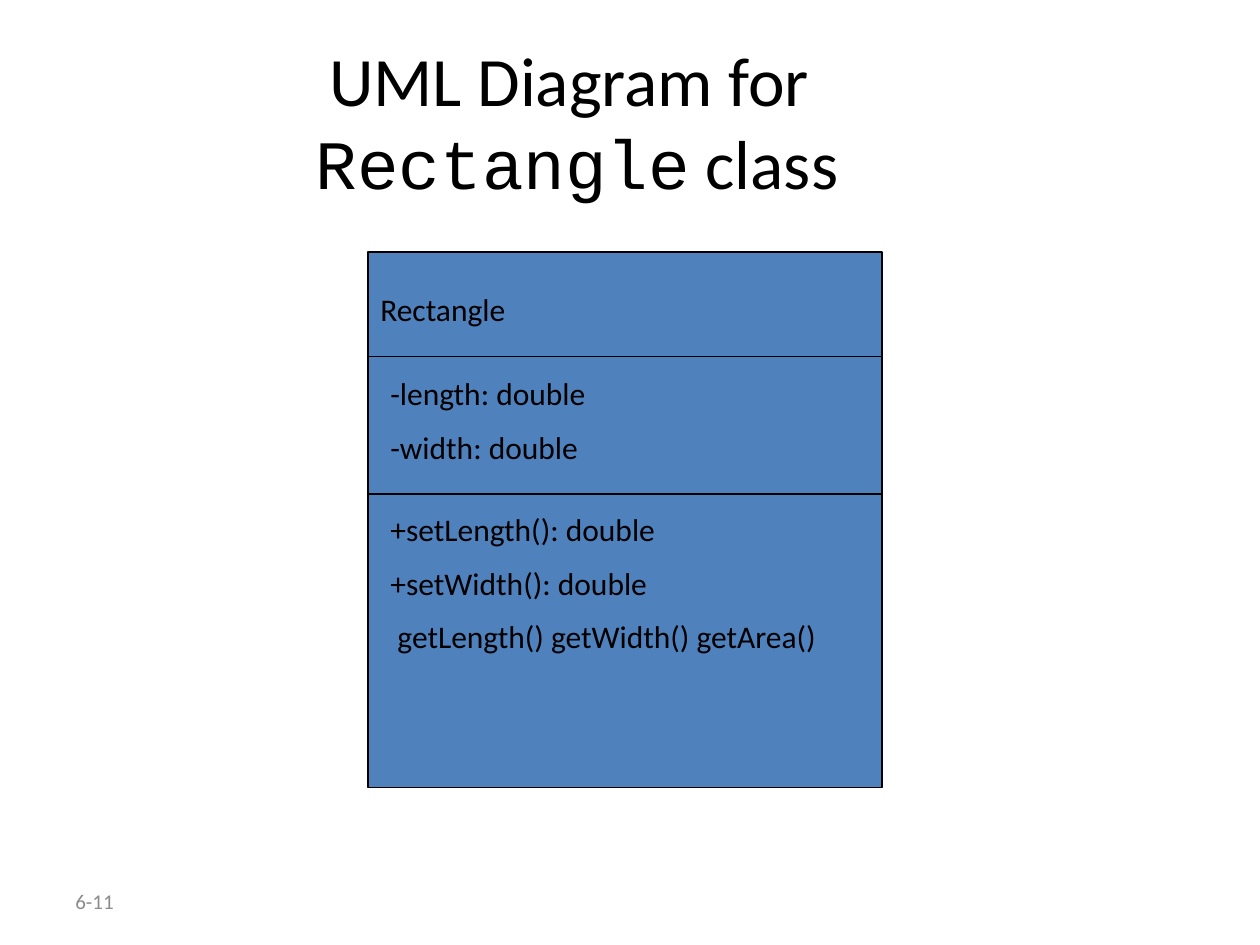
from lxml import etree
from pptx import Presentation
from pptx import util as u
from pptx.dml.color import RGBColor
from pptx.enum import shapes, text
from pptx.oxml.ns import qn

BLACK, BLUE, GREY = "000000", "4F81BD", "8C8C8C"


def color(value):
    return RGBColor.from_string(value)


def set_line(line):
    line.color.rgb = color(BLACK)
    line.width = u.Pt(0.75)


def set_font(span, size, hex_color=BLACK, name="Calibri"):
    values = {"name": name, "size": u.Pt(size)}
    for key, value in values.items():
        setattr(span.font, key, value)
    span.font.color.rgb = color(hex_color)


def add_text_box(page, box, anchor=text.MSO_ANCHOR.TOP):
    frame = page.shapes.add_textbox(*map(u.Inches, box)).text_frame
    for key, value in {"word_wrap": True, "vertical_anchor": anchor}.items():
        setattr(frame, key, value)
    return frame


def add_title(page, box):
    para = add_text_box(page, box, text.MSO_ANCHOR.MIDDLE).paragraphs[0]
    para.alignment = text.PP_ALIGN.CENTER
    set_font(para, 39.6)
    lines = [
        [("UML Diagram for ", "Calibri")],
        [("Rectangle", "Courier New"), (" class", "Calibri")],
    ]
    for index, line in enumerate(lines):
        if index:
            para.add_line_break()
        for words, name in line:
            span = para.add_run()
            span.text = words
            set_font(span, 39.6, name=name)


def add_members(page, box, members):
    frame = add_text_box(page, box)
    for index, member in enumerate(members):
        para = frame.add_paragraph() if index else frame.paragraphs[0]
        if index:
            para.space_before = u.Pt(9)
        span = para.add_run()
        span.text = member
        set_font(span, 18)


def add_divider(page, left, top, width):
    line = page.shapes.add_connector(
        shapes.MSO_CONNECTOR.STRAIGHT,
        *map(u.Inches, (left, top, left + width, top)))
    set_line(line.line)
    etree.SubElement(line._element.spPr, qn("a:effectLst"))


def add_class_diagram(page, box):
    left, top, width, height = box
    # Class outline
    outline = page.shapes.add_shape(
        shapes.MSO_SHAPE.RECTANGLE, *map(u.Inches, box))
    outline.shadow.inherit = False
    outline.fill.solid()
    outline.fill.fore_color.rgb = color(BLUE)
    set_line(outline.line)

    # Name, attributes and methods: indent, offset from top, width, height
    compartments = [
        (0, 0.25, width, 0.5, ["Rectangle"]),
        (0.08, 0.92, 1.83, 0.86, ["-length: double", "-width: double"]),
        (0.08, 2, 3.82, 1.31, ["+setLength(): double", "+setWidth(): double",
                               " getLength() getWidth() getArea()"]),
    ]
    for indent, offset, text_width, text_height, members in compartments:
        add_members(page, (left + indent, top + offset, text_width, text_height),
                    members)

    # Lines between compartments
    for offset in (0.83, 1.92):
        add_divider(page, left, top + offset, width)


def add_page_number(page, box):
    para = add_text_box(page, box, text.MSO_ANCHOR.MIDDLE).paragraphs[0]
    span = para.add_run()
    span.text = "6-11"
    set_font(span, 12, GREY)


def main():
    deck = Presentation()
    deck.slide_width, deck.slide_height = u.Inches(10), u.Inches(7.5)
    page = deck.slides.add_slide(deck.slide_layouts[6])
    add_page_number(page, (0.5, 6.95, 2.33, 0.4))
    add_title(page, (0.33, 0.33, 8.5, 1.25))
    add_class_diagram(page, (2.92, 2, 4.08, 4.25))
    deck.save("out.pptx")


if __name__ == "__main__":
    main()
